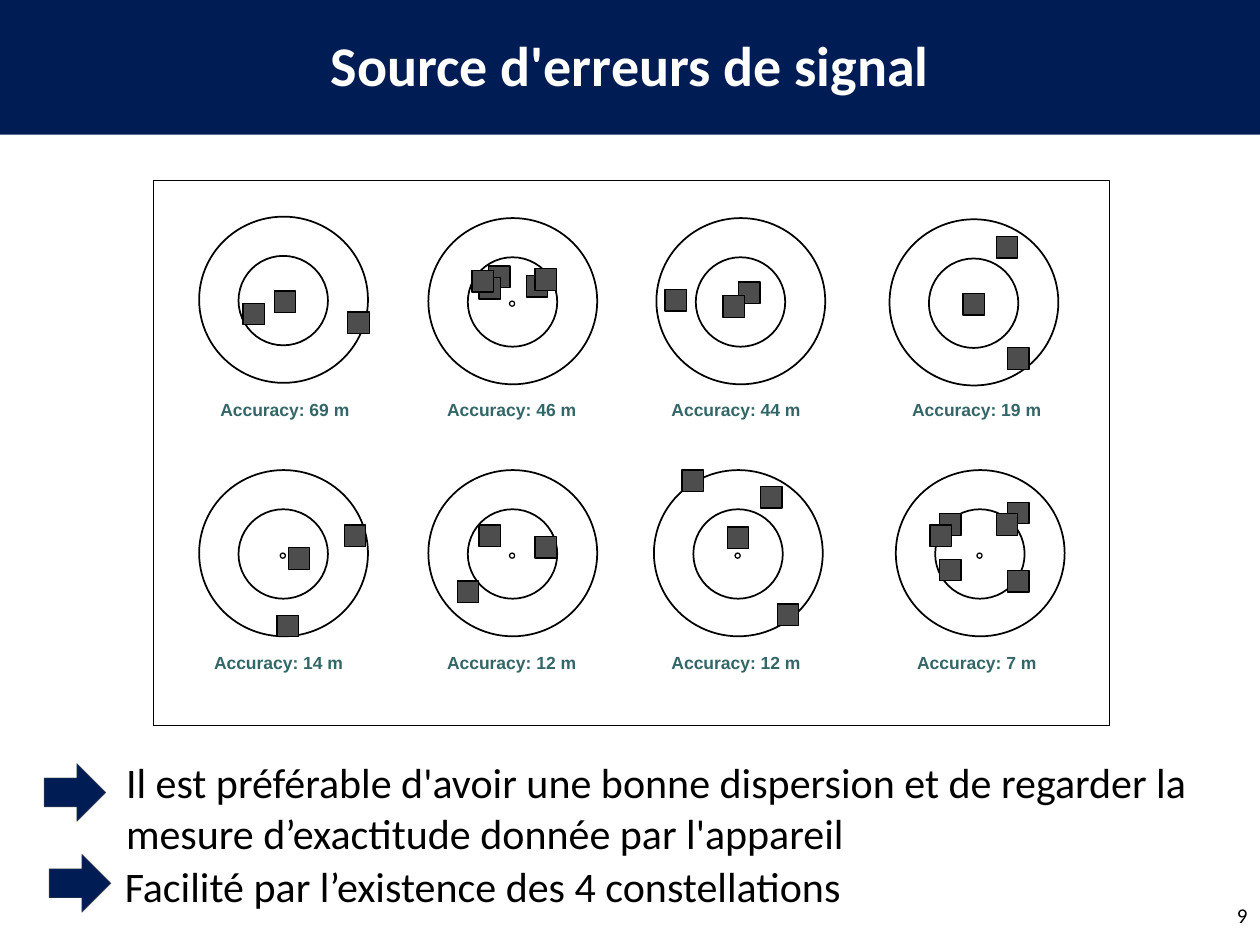
from pptx import Presentation
from pptx.dml.color import RGBColor
from pptx.enum.shapes import MSO_SHAPE as Shape
from pptx.enum.text import MSO_ANCHOR as Anchor, MSO_AUTO_SIZE as AutoSize, PP_ALIGN as Align
from pptx.oxml.xmlchemy import OxmlElement
from pptx.util import Pt

NAVY, WHITE, BLACK, GREY, TEAL = "001C54", "FFFFFF", "000000", "4D4D4D", "346667"
UPPER_LABEL, LOWER_LABEL = 223.9, 368.6
SATELLITE = 12.24

# (left, top), centre mark, (label left, label top, label width), accuracy, satellite offsets
TARGETS = [
    ((113.8, 123.8), False, (118.8, UPPER_LABEL, 94.3), 69,
     [(43, 42.5), (25, 49.5), (85, 54.5)]),
    ((244.8, 124.6), True, (248.4, UPPER_LABEL, 94.3), 46,
     [(34.5, 27.5), (29, 34), (25, 30), (56, 33), (61, 29)]),
    ((375.1, 124.6), False, (376.6, UPPER_LABEL, 94.3), 44,
     [(47, 36.5), (38, 44.5), (5, 41)]),
    ((508.3, 125.3), False, (514.1, UPPER_LABEL, 94.3), 19,
     [(42, 42.5), (61, 10), (67.5, 73.5)]),
    ((113.8, 268.6), True, (115.2, LOWER_LABEL, 94.3), 14,
     [(51, 44.5), (83, 31.5), (44.5, 83)]),
    ((244.8, 268.6), True, (248.4, LOWER_LABEL, 94.3), 12,
     [(29, 31.5), (16.5, 63.5), (61, 38)]),
    ((373.7, 268.6), True, (376.6, LOWER_LABEL, 94.3), 12,
     [(42, 32.5), (16, 0), (61, 9.5), (70.5, 76.5)]),
    ((511.9, 268.6), True, (517, LOWER_LABEL, 88.6), 7,
     [(25, 51), (25, 25), (19.5, 31.5), (64, 18.5), (57.5, 25), (64, 57.5)]),
]


def rgb(value):
    """Turn a hex string into a colour."""
    return RGBColor.from_string(value)


def add_figure(slide, kind, left, top, width, height, fill=None, line=None, weight=0.75):
    """Draw a preset shape with an optional fill and outline."""
    figure = slide.shapes.add_shape(kind, Pt(left), Pt(top), Pt(width), Pt(height))
    figure.shadow.inherit = False
    if fill:
        figure.fill.solid()
        figure.fill.fore_color.rgb = rgb(fill)
    else:
        figure.fill.background()
    if line:
        figure.line.color.rgb = rgb(line)
        figure.line.width = Pt(weight)
    else:
        figure.line.fill.background()
    return figure


def write(holder, text, size, color=BLACK, font="Calibri", bold=False, align=Align.LEFT,
          spacing=1.0, wrap=True, fit=AutoSize.NONE):
    """Fill a text holder with one formatted paragraph."""
    frame = holder.text_frame
    frame.text = text
    frame.word_wrap, frame.auto_size = wrap, fit
    frame.vertical_anchor = Anchor.MIDDLE
    paragraph = frame.paragraphs[0]
    paragraph.alignment, paragraph.line_spacing = align, spacing
    paragraph.space_before = Pt(0)
    style = paragraph.runs[0].font
    style.name, style.size, style.bold = font, Pt(size), bold
    style.color.rgb = rgb(color)


def place(holder, left, top, width, height):
    """Move and size a placeholder."""
    holder.left, holder.top = Pt(left), Pt(top)
    holder.width, holder.height = Pt(width), Pt(height)


def add_label(slide, text, left, top, width, height, **style):
    """Add a text box with one formatted paragraph."""
    label = slide.shapes.add_textbox(Pt(left), Pt(top), Pt(width), Pt(height))
    write(label, text, **style)


def add_statement(slide, holder, text, bounds, arrow_at):
    """Set a statement in a body placeholder behind an arrow."""
    place(holder, *bounds)
    write(holder, text, size=24, fit=AutoSize.SHAPE_TO_FIT_TEXT)
    properties = holder.text_frame.paragraphs[0]._p.get_or_add_pPr()
    properties.set("marL", "0")
    properties.set("indent", "0")
    properties.append(OxmlElement("a:buNone"))
    add_figure(slide, Shape.RIGHT_ARROW, *arrow_at, 35.3, 33.1, NAVY, GREY, 0.25)


def add_target(slide, corner, has_mark, label_at, accuracy, satellites):
    """Draw one target with its satellites and accuracy."""
    left, top = corner
    add_figure(slide, Shape.OVAL, left, top, 96.5, 95, line=BLACK, weight=1)
    add_figure(slide, Shape.OVAL, left + 22.5, top + 22.4, 51.1, 51.1, line=BLACK, weight=1)
    if has_mark:
        add_figure(slide, Shape.OVAL, left + 46.4, top + 47.5, 2.9, 2.9, line=BLACK)
    for across, down in satellites:
        add_figure(slide, Shape.RECTANGLE, left + across, top + down,
                   SATELLITE, SATELLITE, GREY, BLACK)
    add_label(slide, f"Accuracy: {accuracy} m", *label_at, 20.2, size=10, color=TEAL,
              font="Arial", bold=True, wrap=False, fit=AutoSize.SHAPE_TO_FIT_TEXT)


def main():
    """Build the slide and save it."""
    deck = Presentation()
    deck.slide_width, deck.slide_height = Pt(720), Pt(540)
    slide = deck.slides.add_slide(deck.slide_layouts[3])
    title, advice, ease = slide.placeholders

    band = add_figure(slide, Shape.RECTANGLE, 0, 0, 720, 77, NAVY)
    title._element.addprevious(band._element)
    place(title, 49.7, 11.5, 620.6, 54.7)
    write(title, "Source d'erreurs de signal", size=32, color=WHITE, bold=True,
          align=Align.CENTER, spacing=0.9)

    add_figure(slide, Shape.RECTANGLE, 87.8, 103, 546.5, 311.8, WHITE, BLACK, 0.5)
    for target in TARGETS:
        add_target(slide, *target)

    add_statement(slide, advice, "Il est préférable d'avoir une bonne dispersion et de regarder "
                  "la mesure d’exactitude donnée par l'appareil",
                  (64.8, 428.4, 653.8, 65.5), (25.2, 436.3))
    add_statement(slide, ease, "Facilité par l’existence des 4 constellations",
                  (64.1, 488.2, 670.3, 36), (28.1, 488.2))
    add_label(slide, "9", 558, 508.3, 162, 28.8, size=12, align=Align.RIGHT)
    deck.save("out.pptx")


if __name__ == "__main__":
    main()
